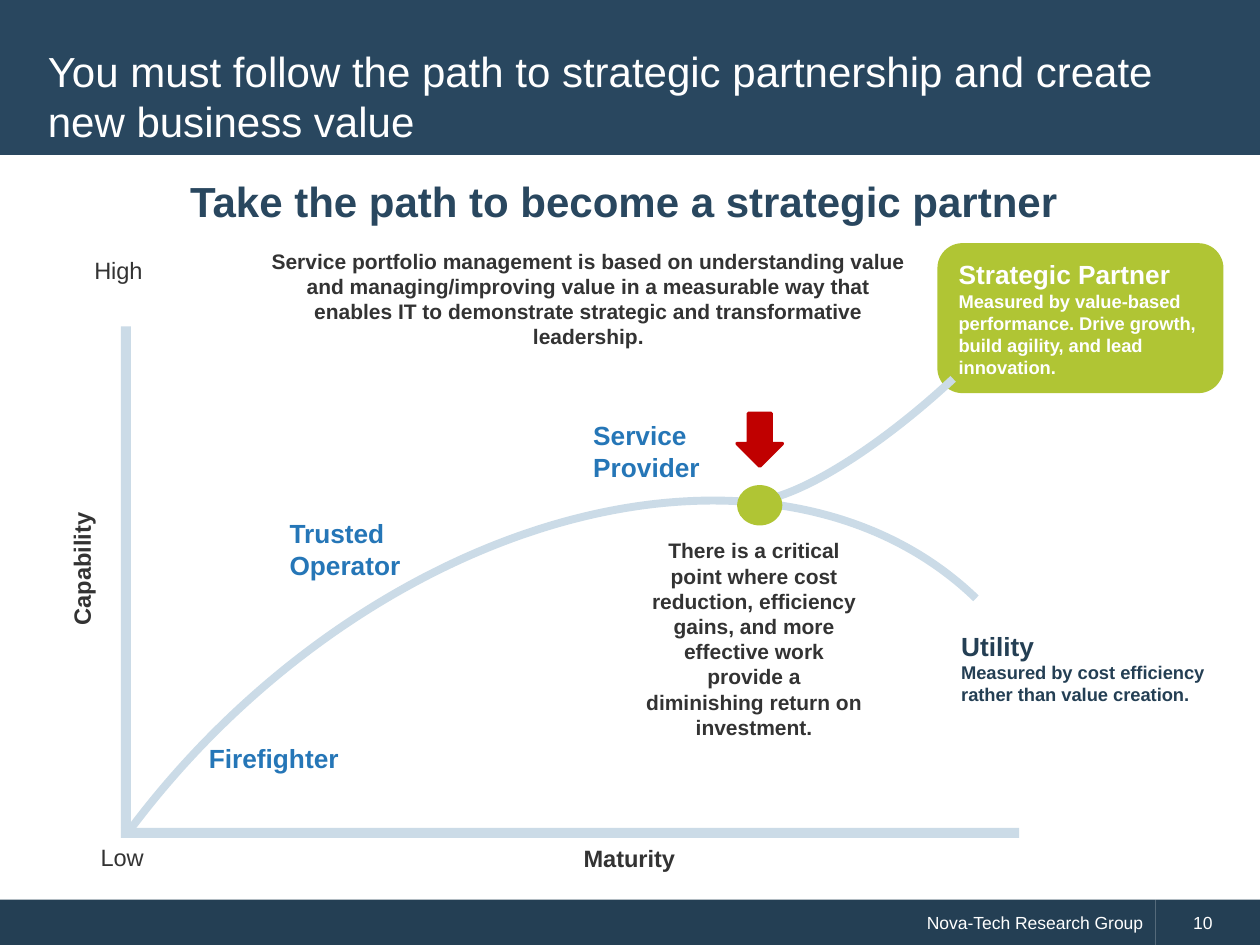
from pptx import Presentation
from pptx.dml.color import RGBColor
from pptx.enum.shapes import MSO_SHAPE as Shape
from pptx.enum.text import MSO_ANCHOR as Anchor, MSO_AUTO_SIZE as AutoSize, PP_ALIGN as Align
from pptx.util import Inches, Pt

NAVY = RGBColor(0x29, 0x47, 0x5F)
DEEP_NAVY = RGBColor(0x24, 0x3F, 0x54)
PALE_BLUE = RGBColor(0xCB, 0xDB, 0xE7)
BLUE = RGBColor(0x25, 0x76, 0xB7)
GREEN = RGBColor(0xB0, 0xC5, 0x34)
RED = RGBColor(0xC0, 0x00, 0x00)
GREY = RGBColor(0x33, 0x33, 0x33)
WHITE = RGBColor(0xFF, 0xFF, 0xFF)

FONT = "Arial"
COLUMNS, ROWS = 100, 75
TITLE_ONLY = 5


class PageBuilder:
    """Draws on one page; places are (column, row, columns wide, rows high)."""

    def __init__(self, deck):
        self.page = deck.slides.add_slide(deck.slide_layouts[TITLE_ONLY])
        self.column = deck.slide_width / COLUMNS
        self.row = deck.slide_height / ROWS

    def place(self, at):
        left, top, width, height = at
        return (round(left * self.column), round(top * self.row),
                round(width * self.column), round(height * self.row))

    def fill_text(self, frame, lines, color, bold=False, align=Align.LEFT):
        """Fill a text frame with (text, size) lines."""
        frame.word_wrap = True
        frame.text = "\n".join(text for text, _ in lines)
        for para, (_, size) in zip(frame.paragraphs, lines):
            para.alignment = align
            for span in para.runs:
                span.font.name = FONT
                span.font.size = Pt(size)
                span.font.bold = bold
                span.font.color.rgb = color

    def title(self, at, text, size):
        box = self.page.shapes.title
        box.left, box.top, box.width, box.height = self.place(at)
        self.fill_text(box.text_frame, [(text, size)], WHITE)
        box.text_frame.vertical_anchor = Anchor.MIDDLE
        box.text_frame.auto_size = AutoSize.NONE
        self.page.shapes.element.append(box.element)

    def text(self, at, lines, color=GREY, bold=True, align=Align.LEFT, rotation=0):
        box = self.page.shapes.add_textbox(*self.place(at))
        box.rotation = rotation
        self.fill_text(box.text_frame, lines, color, bold, align)

    def shape(self, kind, at, fill, outline=None):
        shape = self.page.shapes.add_shape(kind, *self.place(at))
        shape.shadow.inherit = False
        shape.fill.solid()
        shape.fill.fore_color.rgb = fill
        if outline:
            shape.line.color.rgb = fill
            shape.line.width = Pt(outline)
        else:
            shape.line.fill.background()
        return shape

    def footer(self, at, text, align, indent):
        band = self.shape(Shape.RECTANGLE, at, DEEP_NAVY)
        self.fill_text(band.text_frame, [(text, 10)], WHITE, align=align)
        band.text_frame.vertical_anchor = Anchor.MIDDLE
        band.text_frame.margin_left = round(indent * self.column)

    def curve(self, at, rotation, start, end):
        """Draw an arc between two angles in degrees."""
        arc = self.page.shapes.add_shape(Shape.ARC, *self.place(at))
        arc.shadow.inherit = False
        arc.rotation = rotation
        arc.adjustments[0] = start * 0.6
        arc.adjustments[1] = end * 0.6
        arc.fill.background()
        arc.line.color.rgb = PALE_BLUE
        arc.line.width = Pt(4.5)


def main():
    deck = Presentation()
    deck.slide_width, deck.slide_height = Inches(10), Inches(7.5)
    page = PageBuilder(deck)

    page.footer((0, 71.4, 91.7, 3.7), "Nova-Tech Research Group", Align.RIGHT, 3.9)
    page.footer((91.7, 71.4, 8.3, 3.7), "10", Align.LEFT, 3)
    page.shape(Shape.RECTANGLE, (0, 0, 100, 12.3), NAVY)
    page.shape(Shape.ROUNDED_RECTANGLE, (74.4, 19.3, 22.7, 11.9), GREEN)
    page.title((2.8, 2.8, 94.3, 9.6),
               "You must follow the path to strategic partnership and create "
               "new business value", 24)

    # Axes, the two paths and the point where they part
    page.curve((52.8, 20.8, 38.4, 10.7), 137.1, 270, 356.5)
    page.shape(Shape.RECTANGLE, (9.6, 25.9, 0.8, 39.8), PALE_BLUE)
    page.shape(Shape.RECTANGLE, (9.6, 65.7, 71.3, 0.8), PALE_BLUE)
    page.curve((-8.8, 48, 101.8, 72.2), 314, 255.19, 0)
    page.shape(Shape.OVAL, (58.5, 38.5, 3.6, 3.2), GREEN)
    page.shape(Shape.DOWN_ARROW, (58.5, 32.8, 3.6, 4.2), RED, outline=2)

    page.text((40.2, 66.5, 19.5, 3.3), [("Maturity", 13.5)], align=Align.CENTER)
    page.text((-11, 43.5, 35, 3.3), [("Capability", 13.5)], align=Align.CENTER, rotation=270)
    page.text((7, 66.4, 6, 3.3), [("Low", 13.5)], bold=False)
    page.text((6.5, 19.8, 6, 3.3), [("High", 13.5)], bold=False)

    stages = [
        ("Firefighter", (15.6, 58.4, 12.6, 3.5)),
        ("Trusted Operator", (22, 40.6, 12, 6.1)),
        ("Service Provider", (46.1, 32.8, 14.9, 6.1)),
    ]
    for name, at in stages:
        page.text(at, [(name, 15)], BLUE)

    page.text((75.1, 20, 21.9, 10.7), [
        ("Strategic Partner", 15),
        ("Measured by value-based performance. Drive growth, build agility, "
         "and lead innovation.", 10.5)], WHITE)
    page.text((75.3, 49.5, 24.9, 7.1), [
        ("Utility", 15),
        ("Measured by cost efficiency rather than value creation.", 10.5)], DEEP_NAVY)

    page.text((14.1, 13.4, 73.9, 5), [("Take the path to become a strategic partner", 24)], NAVY)
    page.text((50.3, 42.2, 19.1, 17.2), [
        ("There is a critical point where cost reduction, efficiency gains, and more "
         "effective work provide a diminishing return on investment.", 12)],
        align=Align.CENTER)
    page.text((20.3, 19.2, 52.8, 9.1), [
        ("Service portfolio management is based on understanding value and "
         "managing/improving value in a measurable way that enables IT to demonstrate "
         "strategic and transformative leadership.", 12)], align=Align.CENTER)

    deck.save("out.pptx")


if __name__ == "__main__":
    main()
